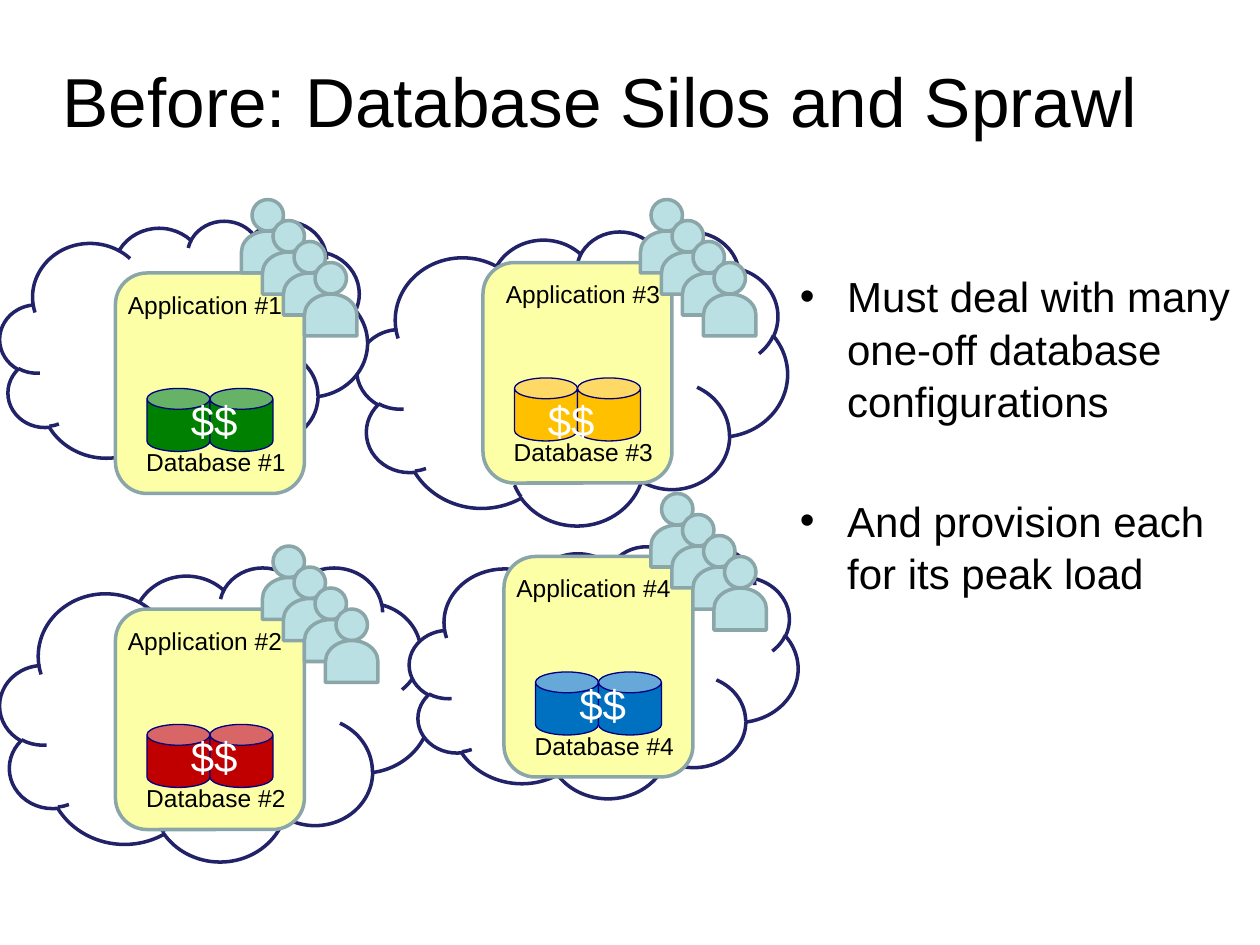
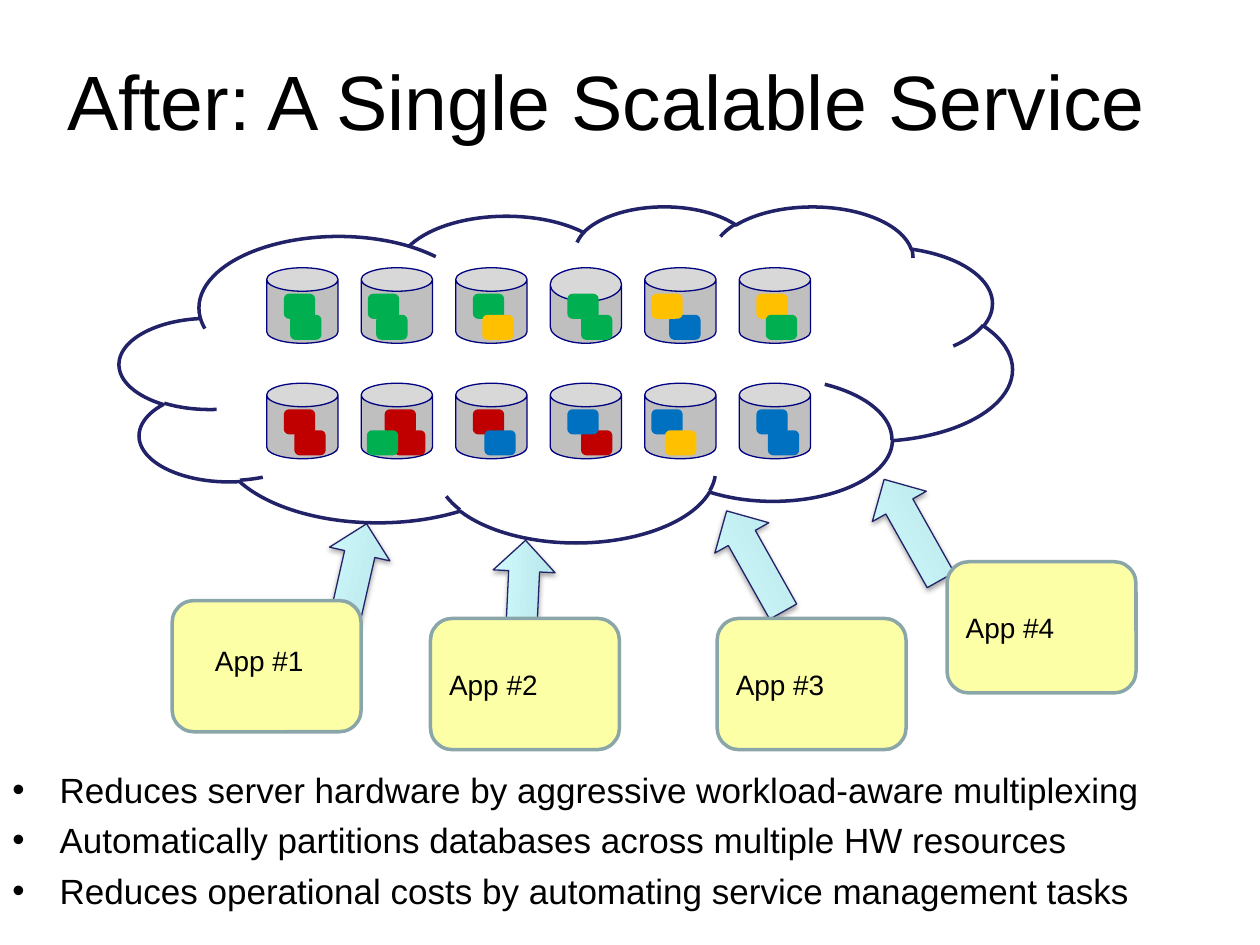
from dataclasses import dataclass
from itertools import product
from typing import NamedTuple

from lxml.etree import SubElement
from pptx import Presentation
from pptx.dml.color import RGBColor
from pptx.enum.shapes import MSO_SHAPE as Preset
from pptx.enum.text import MSO_ANCHOR as Anchor
from pptx.oxml.ns import qn
from pptx.shapes.autoshape import Shape
from pptx.slide import Slide
from pptx.util import Inches, Length, Pt

COLORS = {
    "text": "000000", "white": "FFFFFF", "navy": "222268", "can_line": "000080",
    "card": "FCFFA6", "sage": "8AA6A8", "person": "BBE0E3",
    "arrow_start": "B5E5E9", "arrow_end": "D3FBFF", "gray": "BFBFBF",
    "dark_green": "008000", "green": "00B050", "red": "C00000",
    "blue": "0070C0", "yellow": "FFC000",
}
FONT = "Arial"
COLUMNS, ROWS = 120, 90
SLIDE_WIDTH, SLIDE_HEIGHT = Inches(10), Inches(7.5)
BULLET_INDENT = 4.5
LID_DEPTH = 0.33


class Area(NamedTuple):
    column: float
    row: float
    columns: float
    rows: float


class Style(NamedTuple):
    fill: str
    line: str
    weight: float = 2


class Spot(NamedTuple):
    column: float
    row: float


@dataclass(frozen=True)
class Silo:
    number: int
    color: str
    cloud: Area
    card: Spot
    people: Spot
    cost: Spot = Spot(6, 11)
    label_shift: float = 0


@dataclass(frozen=True)
class App:
    number: int
    card: Spot
    label: Spot
    arrow: Spot
    rotation: float


class Tile(NamedTuple):
    color: str
    shift: float
    level: int


CLOUD = Style("white", "navy")
CARD = Style("card", "sage")
PERSON = Style("person", "sage")

SILOS = [
    Silo(2, "red", Area(0, 54, 41, 28), Spot(11, 58), Spot(26, 52)),
    Silo(3, "yellow", Area(34, 22, 41, 28), Spot(46, 25), Spot(62, 19), Spot(5, 12), 1),
    Silo(4, "blue", Area(39, 52, 37, 24), Spot(48, 53), Spot(63, 47)),
    Silo(1, "dark_green", Area(0, 21, 35, 24), Spot(11, 26), Spot(24, 19)),
]
APPS = [
    App(1, Spot(16.4, 57.2), Spot(2.9, 3.5), Spot(28.2, 52.3), 282.8),
    App(2, Spot(41, 58.9), Spot(0.6, 4.1), Spot(44.3, 54), 272.7),
    App(3, Spot(68.3, 58.9), Spot(0.6, 4.1), Spot(66.4, 50.5), 240.7),
    App(4, Spot(90.2, 53.5), Spot(0.6, 4.1), Spot(81.4, 47.5), 240.7),
]
PARTITIONS = [
    [
        [Tile("green", 1.8, 0), Tile("green", 2.4, 1)],
        [Tile("green", 0.8, 0), Tile("green", 1.6, 1)],
        [Tile("green", 1.8, 0), Tile("yellow", 2.7, 1)],
        [Tile("green", 1.8, 0), Tile("green", 3.1, 1)],
        [Tile("blue", 2.5, 1), Tile("yellow", 0.8, 0)],
        [Tile("yellow", 1.8, 0), Tile("green", 2.7, 1)],
    ],
    [
        [Tile("red", 1.8, 0), Tile("red", 2.8, 1)],
        [Tile("red", 2.4, 0), Tile("red", 3.3, 1), Tile("green", 0.7, 1)],
        [Tile("red", 1.8, 0), Tile("blue", 2.9, 1)],
        [Tile("red", 3.1, 1), Tile("blue", 1.8, 0)],
        [Tile("blue", 0.8, 0), Tile("yellow", 2.1, 1)],
        [Tile("blue", 2.9, 1), Tile("blue", 1.8, 0)],
    ],
]


def across(columns: float) -> Length:
    return Length(round(SLIDE_WIDTH * columns / COLUMNS))


def down(rows: float) -> Length:
    return Length(round(SLIDE_HEIGHT * rows / ROWS))


def place(area: Area) -> tuple[Length, Length, Length, Length]:
    return across(area.column), down(area.row), across(area.columns), down(area.rows)


def rgb(name: str) -> RGBColor:
    return RGBColor.from_string(COLORS[name])


def add_preset(slide: Slide, preset: Preset, area: Area, style: Style,
               rotation: float = 0) -> Shape:
    shape = slide.shapes.add_shape(preset, *place(area))
    shape.shadow.inherit = False
    shape.fill.solid()
    shape.fill.fore_color.rgb = rgb(style.fill)
    shape.line.color.rgb = rgb(style.line)
    shape.line.width = Pt(style.weight)
    shape.rotation = rotation
    return shape


def add_text(slide: Slide, text: str, area: Area, size: float,
             color: str = "text", wrap: bool = True) -> Shape:
    box = slide.shapes.add_textbox(*place(area))
    box.text_frame.text = text
    box.text_frame.word_wrap = wrap
    for paragraph in box.text_frame.paragraphs:
        for run in paragraph.runs:
            run.font.name = FONT
            run.font.size = Pt(size)
            run.font.color.rgb = rgb(color)
    return box


def add_title(slide: Slide, text: str, column: float, size: float) -> None:
    box = add_text(slide, text, Area(column, 3, COLUMNS - column, 13), size)
    box.text_frame.vertical_anchor = Anchor.MIDDLE


def add_bullets(slide: Slide, items: list[str], area: Area, size: float,
                gap: float) -> None:
    box = add_text(slide, "\n".join(items), area, size)
    for index, paragraph in enumerate(box.text_frame.paragraphs):
        paragraph.line_spacing = 1.04
        paragraph.space_before = Pt(gap if index else 0)
        properties = paragraph._p.get_or_add_pPr()
        properties.set("marL", str(across(BULLET_INDENT)))
        properties.set("indent", str(-across(BULLET_INDENT)))
        SubElement(properties, qn("a:buFont"), typeface=FONT)
        SubElement(properties, qn("a:buChar"), char="•")


def add_can(slide: Slide, area: Area, color: str, lid: float = LID_DEPTH) -> None:
    can = add_preset(slide, Preset.CAN, area, Style(color, "can_line", 0.75))
    can.adjustments[0] = lid


def add_silo(slide: Slide, silo: Silo) -> None:
    column, row = silo.card
    add_preset(slide, Preset.ROUNDED_RECTANGLE, Area(column, row, 18, 21), CARD)
    for shift in (3, 9):
        add_can(slide, Area(column + shift, row + 11, 6, 6), silo.color)
    add_text(slide, f"Application #{silo.number}",
             Area(column + silo.label_shift, row + 1, 18, 4), 14)
    add_text(slide, f"Database #{silo.number}",
             Area(column + 1.75, row + 16, 15.8, 4), 14, wrap=False)
    add_text(slide, "$$", Area(column + silo.cost.column, row + silo.cost.row, 7, 6),
             24, "white", wrap=False)


def add_people(slide: Slide, first: Spot) -> None:
    for step in range(0, 8, 2):
        column, row = first.column + step, first.row + step
        add_preset(slide, Preset.OVAL, Area(column, row, 3, 3), PERSON)
        add_preset(slide, Preset.FLOWCHART_DELAY,
                   Area(column - 0.5, row + 2.5, 4, 5), PERSON, 270)


def add_arrow(slide: Slide, app: App) -> None:
    arrow = add_preset(slide, Preset.RIGHT_ARROW, Area(*app.arrow, 11, 5.9),
                       Style("arrow_start", "navy", 0.75), app.rotation)
    arrow.fill.gradient()
    arrow.fill.gradient_angle = 90
    for stop, name in zip(arrow.fill.gradient_stops, ("arrow_start", "arrow_end")):
        stop.color.rgb = rgb(name)
    effects = arrow._element.spPr.find(qn("a:effectLst"))
    shadow = SubElement(effects, qn("a:outerShdw"), blurRad=str(Pt(3.1)),
                        dist=str(Pt(1.8)), dir="5400000", rotWithShape="0")
    shade = SubElement(shadow, qn("a:srgbClr"), val=COLORS["text"])
    SubElement(shade, qn("a:alpha"), val="35000")


def add_app(slide: Slide, app: App) -> None:
    column, row = app.card
    add_preset(slide, Preset.ROUNDED_RECTANGLE, Area(column, row, 18, 12.5), CARD)
    add_text(slide, f"App #{app.number}",
             Area(column + app.label.column, row + app.label.row, 18, 4.4), 16)


def add_server(slide: Slide, rank: int, position: int) -> None:
    column, row = 25.4 + 9 * position, 25.5 + 11 * rank
    lid = 0.47 if (rank, position) == (0, 3) else LID_DEPTH
    add_can(slide, Area(column, row, 6.8, 7.2), "gray", lid)
    for tile in PARTITIONS[rank][position]:
        area = Area(column + tile.shift, row + 2.65 + 2 * tile.level, 2.65, 2.05)
        add_preset(slide, Preset.ROUNDED_RECTANGLE, area, Style(tile.color, tile.color))


def build_before(slide: Slide) -> None:
    for silo in SILOS:
        add_preset(slide, Preset.CLOUD, silo.cloud, CLOUD)
    add_title(slide, "Before: Database Silos and Sprawl", 4.8, 39.6)
    for silo in SILOS:
        add_silo(slide, silo)
    add_bullets(slide, ["Must deal with many one-off database configurations",
                        "And provision each for its peak load"],
                Area(75, 25, 45, 33), 24, 38.5)
    for silo in SILOS:
        add_people(slide, silo.people)


def build_after(slide: Slide) -> None:
    for app in APPS:
        add_arrow(slide, app)
    add_preset(slide, Preset.CLOUD, Area(11.4, 19.6, 85, 32), CLOUD)
    for rank, position in product(range(2), range(6)):
        add_server(slide, rank, position)
    add_title(slide, "After: A Single Scalable Service", 5.2, 44)
    for app in APPS:
        add_app(slide, app)
    add_bullets(slide, ["Reduces server hardware by aggressive workload-aware multiplexing",
                        "Automatically partitions databases across multiple HW resources",
                        "Reduces operational costs by automating service management tasks"],
                Area(0, 72.4, COLUMNS, 13.7), 20, 4)


def main() -> None:
    presentation = Presentation()
    presentation.slide_width, presentation.slide_height = SLIDE_WIDTH, SLIDE_HEIGHT
    for build in (build_before, build_after):
        build(presentation.slides.add_slide(presentation.slide_layouts[6]))
    presentation.save("out.pptx")


if __name__ == "__main__":
    main()
